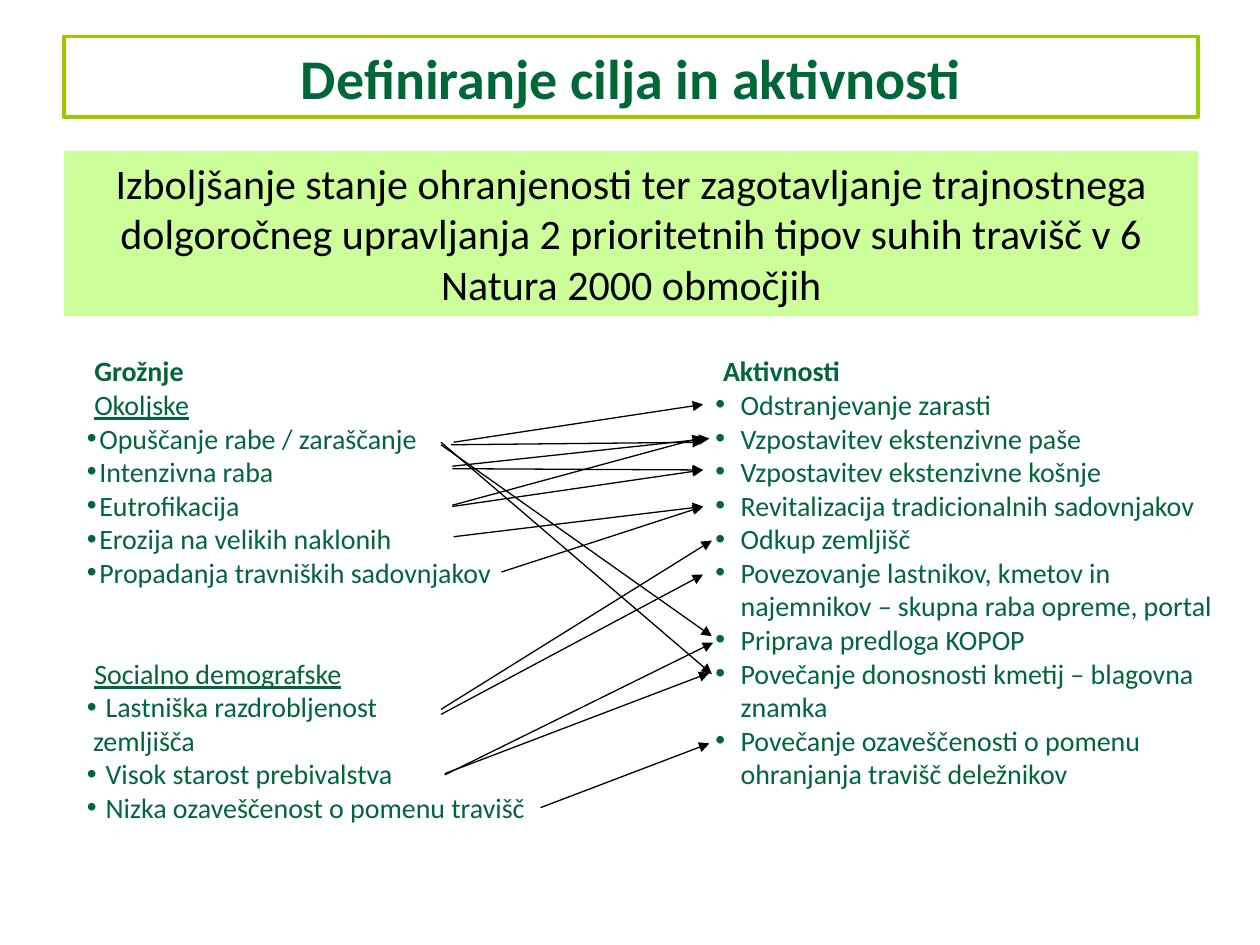
"""Build a slide that links threats to dry grasslands with planned activities."""
import pptx
import pptx.util
import pptx.dml.color
import pptx.enum.shapes
import pptx.enum.text
import pptx.oxml.ns
from lxml import etree

Inches = pptx.util.Inches
Pt = pptx.util.Pt
COLORS = {"text": "006738", "frame": "99CC00", "goal": "CCFF99", "black": "000000"}
HEADING = {"bold": True}
SUBHEADING = {"underline": True}
THREATS = [
    "Opuščanje rabe / zaraščanje",
    "Intenzivna raba",
    "Eutrofikacija",
    "Erozija na velikih naklonih",
    "Propadanja travniških sadovnjakov",
]
ACTIVITIES = [
    "Odstranjevanje zarasti",
    "Vzpostavitev ekstenzivne paše",
    "Vzpostavitev ekstenzivne košnje",
    "Revitalizacija tradicionalnih sadovnjakov",
    "Odkup zemljišč",
    "Povezovanje lastnikov, kmetov in najemnikov – skupna raba opreme, portal",
    "Priprava predloga KOPOP",
    "Povečanje donosnosti kmetij – blagovna znamka",
    "Povečanje ozaveščenosti o pomenu ohranjanja travišč deležnikov",
]
ARROWS = [
    (3.6, 3.51, 5.58, 3.21), (3.59, 3.72, 5.58, 3.73), (3.6, 4.26, 5.58, 4.02),
    (3.59, 3.7, 5.63, 3.48), (3.59, 4.01, 5.58, 3.47), (3.98, 4.54, 5.58, 4.02),
    (3.53, 6.14, 5.63, 5.34), (3.53, 6.15, 5.66, 5.1), (3.5, 5.63, 5.65, 4.29),
    (3.59, 4.02, 5.58, 3.73), (3.5, 5.67, 5.58, 4.56), (3.58, 3.53, 5.58, 3.51),
    (4.29, 6.41, 5.63, 5.9), (3.5, 3.53, 5.65, 5.05), (3.5, 3.51, 5.65, 5.35),
]


def rgb(name):
    """Return a named colour."""
    return pptx.dml.color.RGBColor.from_string(COLORS[name])


def set_all(target, values):
    """Set every attribute in a dict of format values."""
    for name, value in values.items():
        setattr(target, name, value)


def add_text(para, text, size, color, style):
    """Write one formatted span into a paragraph."""
    span = para.add_run()
    span.text = text
    set_all(span.font, {"name": "Calibri", "size": Pt(size), **style})
    span.font.color.rgb = rgb(color)


def set_frame(box, margin=0.05, anchor="TOP"):
    """Make a box wrap its text and grow to fit it."""
    set_all(box.text_frame, {
        "word_wrap": True,
        "auto_size": pptx.enum.text.MSO_AUTO_SIZE.SHAPE_TO_FIT_TEXT,
        "vertical_anchor": getattr(pptx.enum.text.MSO_ANCHOR, anchor),
        "margin_top": Inches(margin),
        "margin_bottom": Inches(margin),
    })


def add_banner(page, top, height, text, size, color, fill=None, line=None, style=None, **frame):
    """Add a full-width rectangle with centred text."""
    box = page.shapes.add_shape(pptx.enum.shapes.MSO_SHAPE.RECTANGLE,
                                Inches(0.51), Inches(top), Inches(9), Inches(height))
    box.shadow.inherit = False
    if fill:
        box.fill.solid()
        box.fill.fore_color.rgb = rgb(fill)
    else:
        box.fill.background()
    if line:
        box.line.color.rgb = rgb(line)
        box.line.width = Pt(2.25)
    else:
        box.line.fill.background()
    set_frame(box, **frame)
    para = box.text_frame.paragraphs[0]
    para.alignment = pptx.enum.text.PP_ALIGN.CENTER
    add_text(para, text, size, color, style or {})


def add_list(page, left, width, height, entries):
    """Add a text column from (text, indent, hanging, bulleted, style, gap) entries."""
    box = page.shapes.add_textbox(Inches(left), Inches(2.76), Inches(width), Inches(height))
    set_frame(box)
    box.text_frame.margin_right = 0
    for index, (text, indent, hanging, bulleted, style, gap) in enumerate(entries):
        para = box.text_frame.add_paragraph() if index else box.text_frame.paragraphs[0]
        props = para._p.get_or_add_pPr()
        props.set("marL", str(Inches(indent)))
        props.set("indent", str(-Inches(hanging)))
        if gap:
            para.space_before = Pt(gap)
        if bulleted:
            font = etree.SubElement(props, pptx.oxml.ns.qn("a:buFont"))
            font.set("typeface", "Arial")
            etree.SubElement(props, pptx.oxml.ns.qn("a:buChar")).set("char", "•")
        add_text(para, text, 16, "text", style)


def heading(text, style, gap=0):
    """Describe an unbulleted heading entry."""
    return text, 0.06, 0, False, style, gap


def item(text, indent, bulleted=True):
    """Describe a list entry with a hanging indent."""
    return text, indent, indent, bulleted, {}, 0


def add_arrow(page, x1, y1, x2, y2):
    """Add a thin black arrow from a threat to an activity."""
    arrow = page.shapes.add_connector(pptx.enum.shapes.MSO_CONNECTOR.STRAIGHT,
                                      Inches(x1), Inches(y1), Inches(x2), Inches(y2))
    arrow.line.color.rgb = rgb("black")
    arrow.line.width = Pt(0.75)
    line = arrow.line._get_or_add_ln()
    etree.SubElement(line, pptx.oxml.ns.qn("a:tailEnd")).set("type", "triangle")
    etree.SubElement(arrow._element.spPr, pptx.oxml.ns.qn("a:effectLst"))


def main():
    """Build and save the deck."""
    deck = pptx.Presentation()
    set_all(deck, {"slide_width": Inches(10), "slide_height": Inches(7.5)})
    page = deck.slides.add_slide(deck.slide_layouts[6])
    add_banner(page, 0.29, 0.64, "Definiranje cilja in aktivnosti", 32, "text",
               line="frame", style=HEADING, margin=0.15, anchor="MIDDLE")
    add_banner(page, 1.2, 1.31,
               "Izboljšanje stanje ohranjenosti ter zagotavljanje trajnostnega dolgoročneg "
               "upravljanja 2 prioritetnih tipov suhih travišč v 6 Natura 2000 območjih",
               24, "black", fill="goal")
    add_list(page, 0.59, 3.69, 3.87, [
        heading("Grožnje", HEADING),
        heading("Okoljske", SUBHEADING),
        *[item(text, 0.1) for text in THREATS],
        heading("Socialno demografske", SUBHEADING, gap=38.4),
        item(" Lastniška razdrobljenost", 0.1),
        item(" zemljišča", 0.1, bulleted=False),
        item(" Visok starost prebivalstva", 0.1),
        item(" Nizka ozaveščenost o pomenu travišč", 0.1),
    ])
    add_list(page, 5.58, 4.22, 3.6, [
        heading("Aktivnosti", HEADING),
        *[item(text, 0.2) for text in ACTIVITIES],
    ])
    for ends in ARROWS:
        add_arrow(page, *ends)
    deck.save("out.pptx")


if __name__ == "__main__":
    main()
